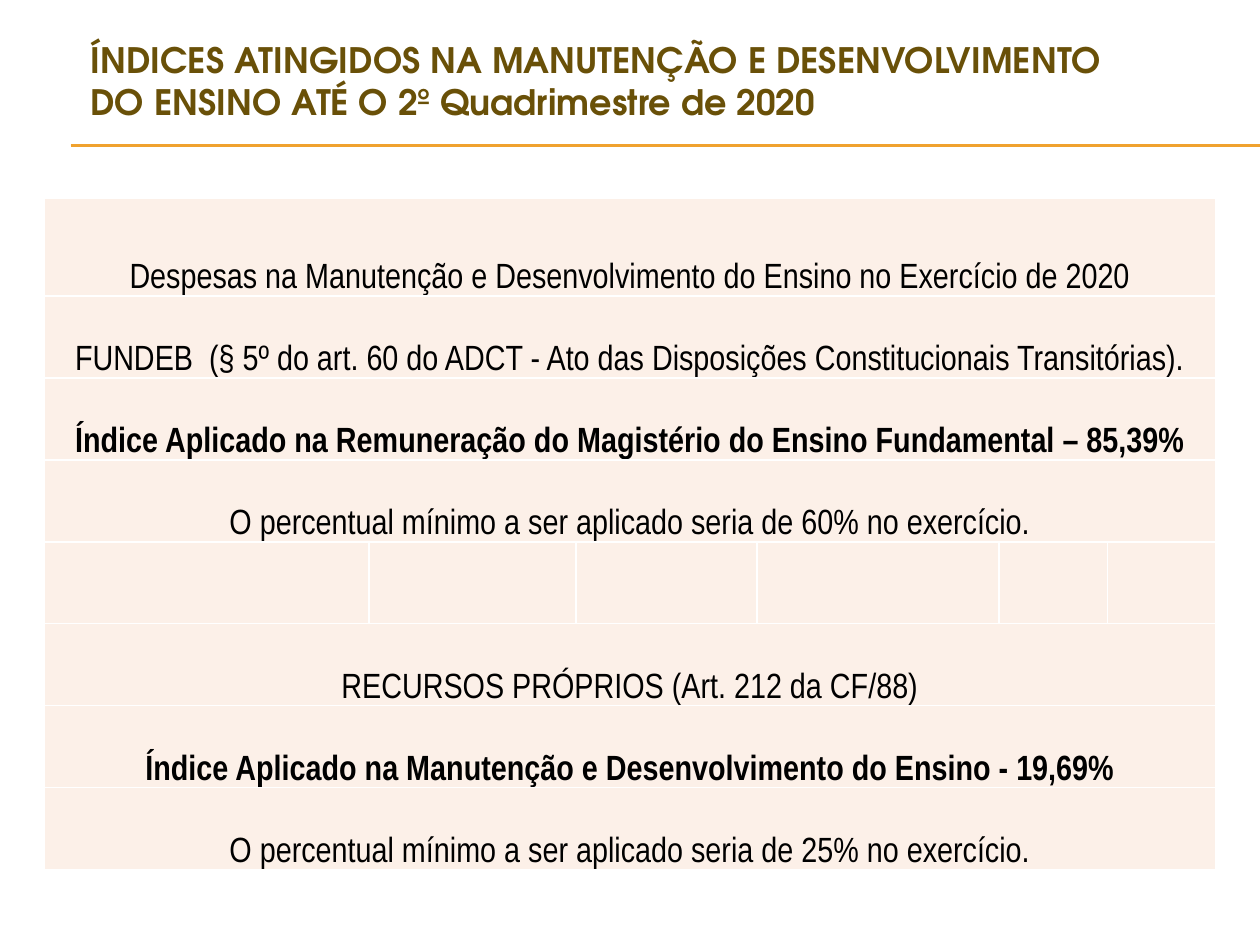
from typing import NamedTuple

from lxml.etree import SubElement
from pptx import Presentation
from pptx.dml.color import RGBColor
from pptx.enum.shapes import MSO_CONNECTOR
from pptx.enum.text import MSO_ANCHOR, PP_ALIGN
from pptx.oxml.ns import qn
from pptx.util import Inches, Pt

GOLD = RGBColor(0xF0, 0xA2, 0x2E)
BROWN = RGBColor(0x69, 0x50, 0x08)
CREAM = RGBColor(0xFC, 0xF0, 0xE8)
WHITE = RGBColor(0xFF, 0xFF, 0xFF)
BLACK = RGBColor(0x00, 0x00, 0x00)

TITLE = ("ÍNDICES ATINGIDOS NA MANUTENÇÃO E DESENVOLVIMENTO "
         "DO ENSINO ATÉ O 2º Quadrimestre de 2020")
COLUMN_WIDTHS = (2.58, 1.64, 1.44, 1.92, 0.86, 0.86)
HEADER_HEIGHT = 0.78
ROW_HEIGHT = 0.65


class TableRow(NamedTuple):
    text: str = ""
    bold: bool = False


ROWS = (
    TableRow("Despesas na Manutenção e Desenvolvimento do Ensino no Exercício de 2020"),
    TableRow("FUNDEB  (§ 5º do art. 60 do ADCT - Ato das Disposições Constitucionais Transitórias)."),
    TableRow("Índice Aplicado na Remuneração do Magistério do Ensino Fundamental – 85,39%", True),
    TableRow("O percentual mínimo a ser aplicado seria de 60% no exercício."),
    TableRow(),
    TableRow("RECURSOS PRÓPRIOS (Art. 212 da CF/88)"),
    TableRow("Índice Aplicado na Manutenção e Desenvolvimento do Ensino - 19,69%", True),
    TableRow("O percentual mínimo a ser aplicado seria de 25% no exercício."),
)


def set_attributes(target, values: dict) -> None:
    for name, value in values.items():
        setattr(target, name, value)


def write_text(para, text: str, font: str, color: RGBColor, bold: bool,
               alignment: PP_ALIGN) -> None:
    para.alignment = alignment
    span = para.add_run()
    span.text = text
    set_attributes(span.font, {"name": font, "size": Pt(20), "bold": bold})
    span.font.color.rgb = color


def add_rule(page, top: float) -> None:
    """Draw a gold line from the left margin to the page edge."""
    rule = page.shapes.add_connector(MSO_CONNECTOR.STRAIGHT, Inches(0.56), Inches(top),
                                     Inches(10), Inches(top))
    rule.line.color.rgb = GOLD
    rule.line.width = Pt(0.75)
    SubElement(rule.element.spPr, qn("a:effectLst"))


def add_title(page) -> None:
    box = page.shapes.add_textbox(Inches(0.62), Inches(0.25), Inches(8.67), Inches(0.78))
    frame = box.text_frame
    set_attributes(frame, {"word_wrap": True, "vertical_anchor": MSO_ANCHOR.MIDDLE})
    write_text(frame.paragraphs[0], TITLE, "TeX Gyre Adventor", BROWN, True, PP_ALIGN.LEFT)


def style_cell(cell) -> None:
    """Give the cell white borders, a cream fill and narrow margins."""
    properties = cell._tc.get_or_add_tcPr()
    for side in ("a:lnL", "a:lnR", "a:lnT", "a:lnB"):
        border = SubElement(properties, qn(side), w=str(Pt(1)))
        fill = SubElement(border, qn("a:solidFill"))
        SubElement(fill, qn("a:srgbClr"), val=str(WHITE))
    cell.fill.solid()
    cell.fill.fore_color.rgb = CREAM
    set_attributes(cell, {
        "vertical_anchor": MSO_ANCHOR.BOTTOM,
        "margin_left": Inches(0.01),
        "margin_right": Inches(0.01),
        "margin_top": Inches(0.01),
        "margin_bottom": 0,
    })


def add_index_table(page) -> None:
    heights = [HEADER_HEIGHT] + [ROW_HEIGHT] * (len(ROWS) - 1)
    table = page.shapes.add_table(
        len(ROWS), len(COLUMN_WIDTHS), Inches(0.35), Inches(1.57),
        Inches(sum(COLUMN_WIDTHS)), Inches(sum(heights))).table
    set_attributes(table, {"first_row": False, "horz_banding": False})
    for column, width in zip(table.columns, COLUMN_WIDTHS):
        column.width = Inches(width)
    for index, (row, height) in enumerate(zip(ROWS, heights)):
        table.rows[index].height = Inches(height)
        cells = list(table.rows[index].cells)
        for cell in cells:
            style_cell(cell)
        if row.text:
            cells[0].merge(cells[-1])
            write_text(cells[0].text_frame.paragraphs[0], row.text, "Arial Narrow",
                       BLACK, row.bold, PP_ALIGN.CENTER)


def main() -> None:
    deck = Presentation()
    set_attributes(deck, {"slide_width": Inches(10), "slide_height": Inches(7.5)})
    page = deck.slides.add_slide(deck.slide_layouts[6])
    for top in (1.15, 1.16):
        add_rule(page, top)
    add_title(page)
    add_index_table(page)
    deck.save("out.pptx")


if __name__ == "__main__":
    main()
